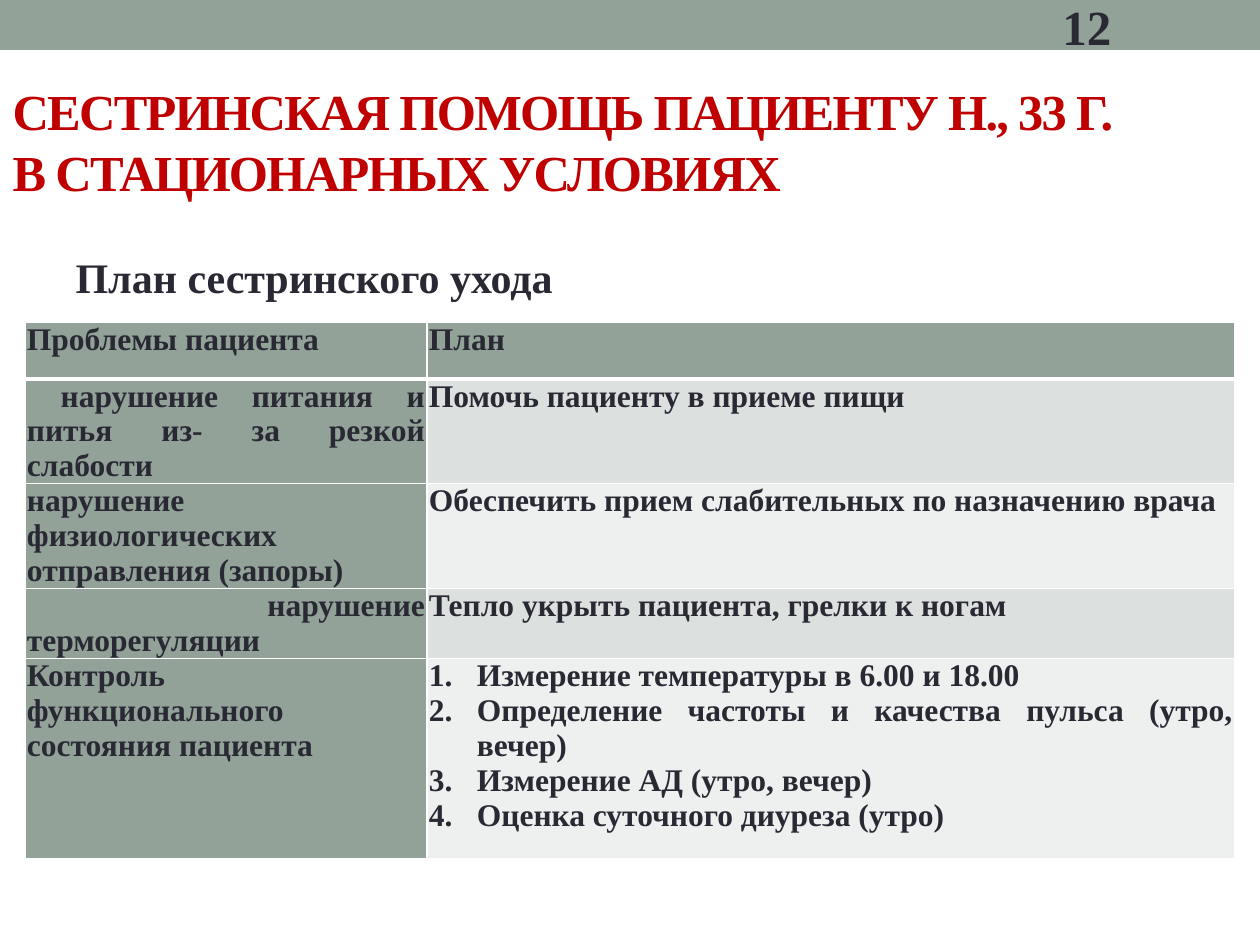
from typing import NamedTuple

from lxml import etree
from pptx import Presentation
from pptx.dml.color import RGBColor
from pptx.enum.shapes import MSO_SHAPE
from pptx.enum.text import MSO_ANCHOR, MSO_AUTO_SIZE, PP_ALIGN
from pptx.oxml.ns import qn
from pptx.util import Pt

RECT = MSO_SHAPE.RECTANGLE
MIDDLE, TOP = MSO_ANCHOR.MIDDLE, MSO_ANCHOR.TOP
LEFT, JUSTIFY = PP_ALIGN.LEFT, PP_ALIGN.JUSTIFY
FIXED = MSO_AUTO_SIZE.NONE

SAGE = RGBColor(0x93, 0xA2, 0x99)
BANDS = RGBColor(0xDC, 0xE0, 0xDE), RGBColor(0xEE, 0xF0, 0xEF)
INK = RGBColor(0x29, 0x29, 0x34)
RED = RGBColor(0xC0, 0x00, 0x00)
EDGE = "FFFFFF"
FONT = "Times New Roman"
SCALE = 914400 // 126  # EMU in one px
COLS = 402, 808
INDENT = 48


class Row(NamedTuple):
    height: int
    issue: str
    plan: tuple[str, ...]


ROWS = [
    Row(57, "Проблемы пациента", ("План ",)),
    Row(104, " нарушение питания и питья из- за резкой слабости",
        ("Помочь пациенту в приеме пищи",)),
    Row(105, "нарушение физиологических отправления (запоры)",
        ("Обеспечить прием слабительных по назначению врача",)),
    Row(70, " нарушение терморегуляции",
        ("Тепло укрыть пациента, грелки к ногам",)),
    Row(200, "Контроль функционального состояния пациента",
        ("Измерение температуры в 6.00 и 18.00",
         "Определение частоты и качества пульса (утро, вечер)",
         "Измерение АД (утро, вечер)",
         "Оценка суточного диуреза (утро)")),
]


def px(size: int) -> int:
    return size * SCALE


def place(shape, left: int, top: int, width: int, height: int) -> None:
    shape.left, shape.top = px(left), px(top)
    shape.width, shape.height = px(width), px(height)


def style(frame, size: float, color: RGBColor, align=LEFT) -> None:
    for para in frame.paragraphs:
        para.alignment = align
        for run in para.runs:
            font = run.font
            font.name, font.size, font.bold = FONT, Pt(size), True
            font.color.rgb = color


def write(shape, text: str, size: float, color: RGBColor, anchor) -> None:
    frame = shape.text_frame
    frame.text = text
    frame.word_wrap, frame.auto_size = True, FIXED
    frame.vertical_anchor = anchor
    style(frame, size, color)


def number(para) -> None:
    props = para._p.get_or_add_pPr()
    props.set("marL", str(px(INDENT)))
    props.set("indent", str(-px(INDENT)))
    etree.SubElement(props, qn("a:buFont"), typeface="+mj-lt")
    etree.SubElement(props, qn("a:buAutoNum"), type="arabicPeriod")


def border(cell, low: int, high: int) -> None:
    """Draw white edges; low and high are bottom and top widths in points."""
    props = cell._tc.get_or_add_tcPr()
    widths = {"lnL": 1, "lnR": 1, "lnT": high, "lnB": low}
    for spot, (tag, width) in enumerate(widths.items()):
        line = etree.Element(qn(f"a:{tag}"), w=str(Pt(width)))
        fill = etree.SubElement(line, qn("a:solidFill"))
        etree.SubElement(fill, qn("a:srgbClr"), val=EDGE)
        props.insert(spot, line)


def fill_cell(cell, lines: tuple[str, ...], color: RGBColor) -> None:
    cell.margin_left = cell.margin_right = px(2)
    cell.margin_top = cell.margin_bottom = 0
    cell.fill.solid()
    cell.fill.fore_color.rgb = color
    frame = cell.text_frame
    frame.text = "\n".join(lines)
    style(frame, 18, INK, JUSTIFY)
    if len(lines) > 1:
        for para in frame.paragraphs:
            number(para)


def draw_table(slide, rows: list[Row]) -> None:
    total = sum(row.height for row in rows)
    table = slide.shapes.add_table(
        len(rows), len(COLS), px(25), px(322), px(sum(COLS)), px(total)).table
    for col, width in zip(table.columns, COLS):
        col.width = px(width)
    for i, row in enumerate(rows):
        table.rows[i].height = px(row.height)
        band = BANDS[(i - 1) % 2] if i else SAGE
        parts = ((row.issue,), SAGE), (row.plan, band)
        for j, (lines, color) in enumerate(parts):
            cell = table.cell(i, j)
            fill_cell(cell, lines, color)
            border(cell, low=1 if i else 3, high=3 if i == 1 else 1)


def main() -> None:
    deck = Presentation()
    deck.slide_width, deck.slide_height = px(1260), px(945)
    slide = deck.slides.add_slide(deck.slide_layouts[1])
    shapes = slide.shapes

    # Top band
    band = shapes.add_shape(RECT, 0, 0, px(1260), px(50))
    band.shadow.inherit = False
    band.fill.solid()
    band.fill.fore_color.rgb = SAGE
    band.line.fill.background()

    # Title
    title = shapes.title
    place(title, 0, 73, 1197, 136)
    write(title, "СЕСТРИНСКАЯ ПОМОЩЬ ПАЦИЕНТУ Н., 33 Г. \vВ СТАЦИОНАРНЫХ УСЛОВИЯХ",
          28.8, RED, MIDDLE)
    for run in title.text_frame.paragraphs[0].runs:
        run.font._element.set("spc", "-100")

    # Subtitle in the body
    body = slide.placeholders[1]
    place(body, 63, 220, 1134, 672)
    write(body, "План сестринского ухода", 24, INK, TOP)
    para = body.text_frame.paragraphs[0]
    para.line_spacing, para.space_before = 1.5, Pt(4.8)
    props = para._p.get_or_add_pPr()
    props.set("marL", "0")
    props.set("indent", "0")
    etree.SubElement(props, qn("a:buNone"))

    # Page number
    page = shapes.add_textbox(px(1050), px(3), px(147), px(45))
    write(page, "12", 28, INK, MIDDLE)

    # Care plan
    draw_table(slide, ROWS)
    deck.save("out.pptx")


if __name__ == "__main__":
    main()
